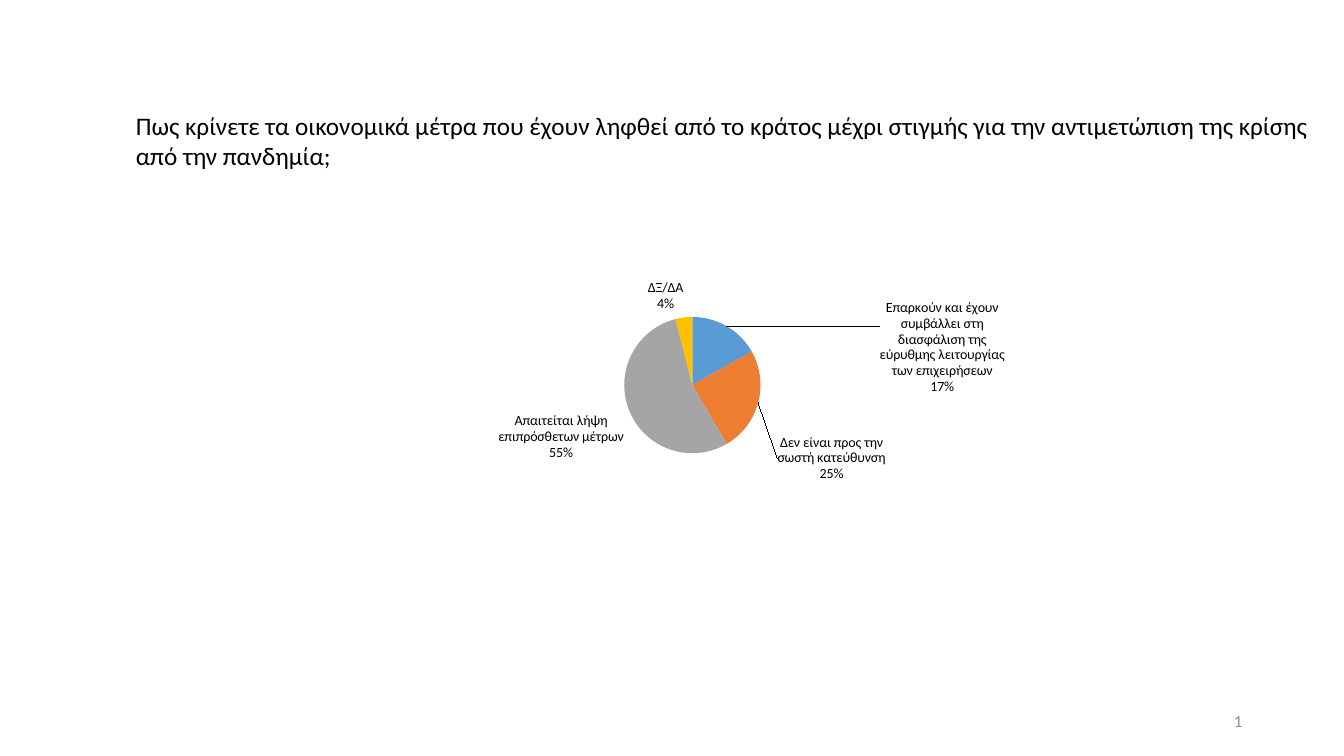
from pptx import Presentation
from pptx.chart.data import CategoryChartData
from pptx.dml.color import RGBColor
from pptx.enum.chart import XL_CHART_TYPE, XL_LABEL_POSITION
from pptx.enum.text import MSO_ANCHOR, PP_ALIGN
from pptx.oxml import parse_xml
from pptx.oxml.ns import nsdecls, qn
from pptx.util import Inches, Pt

PIE = XL_CHART_TYPE.PIE
OUTSIDE = XL_LABEL_POSITION.OUTSIDE_END
LEFT, RIGHT = PP_ALIGN.LEFT, PP_ALIGN.RIGHT
TOP, MIDDLE = MSO_ANCHOR.TOP, MSO_ANCHOR.MIDDLE

BLACK = RGBColor(0x00, 0x00, 0x00)
GRAY = RGBColor(0x8C, 0x8C, 0x8C)
BLUE = RGBColor(0x5B, 0x9B, 0xD5)
ORANGE = RGBColor(0xED, 0x7D, 0x31)
SILVER = RGBColor(0xA5, 0xA5, 0xA5)
GOLD = RGBColor(0xFF, 0xC0, 0x00)

# Answer, share in percent, colour, label shift as a fraction of the chart
ANSWERS = [
    ("Επαρκούν και έχουν συμβάλλει στη διασφάλιση της εύρυθμης λειτουργίας "
     "των επιχειρήσεων", 17, BLUE, (0.22, 0.27)),
    ("Δεν είναι προς την σωστή κατεύθυνση", 25, ORANGE, (0.02, 0.2)),
    ("Απαιτείται λήψη επιπρόσθετων μέτρων", 55, SILVER, None),
    ("ΔΞ/ΔΑ", 4, GOLD, None),
]
PERCENT = '0"%"'


class SlideBuilder:
    def __init__(self, s, font="Calibri"):
        self.s = s
        self.font = font

    def style(self, font, size, color):
        font.name = self.font
        font.size = Pt(size)
        font.color.rgb = color

    def text(self, box, text, size, color, align=LEFT, anchor=TOP):
        tf = self.s.shapes.add_textbox(*map(Inches, box)).text_frame
        tf.word_wrap = True
        tf.vertical_anchor = anchor
        p = tf.paragraphs[0]
        p.text = text
        p.alignment = align
        self.style(p.font, size, color)

    def pie(self, box, answers, plot_box):
        data = CategoryChartData()
        data.categories = [a[0] for a in answers]
        data.add_series("Series 1", [a[1] for a in answers])
        chart = self.s.shapes.add_chart(PIE, *map(Inches, box), data).chart
        chart.has_legend = False
        chart.has_title = False
        self.style(chart.font, 10, BLACK)
        plot = chart.plots[0]
        plot.vary_by_categories = True
        series = plot.series[0]

        # Labels: category above percentage
        labels = series.data_labels
        labels.show_category_name = True
        labels.show_value = True
        labels.number_format = PERCENT
        labels.number_format_is_linked = False
        labels.position = OUTSIDE
        dLbls = labels._element
        dLbls.find(qn("c:showBubbleSize")).addnext(
            parse_xml(f'<c:separator {nsdecls("c")}>\n</c:separator>'))

        # Slice colours and moved labels
        for i, (_, _, color, shift) in enumerate(answers):
            fill = series.points[i].format.fill
            fill.solid()
            fill.fore_color.rgb = color
            if shift:
                dLbls.insert(i, self.moved_label(i, *shift))

        # Fixed place of the pie inside the chart
        area = chart._chartSpace.chart.plotArea
        for layout in area.findall(qn("c:layout")):
            area.remove(layout)
        x, y, w, h = plot_box
        area.insert(0, parse_xml(
            f'<c:layout {nsdecls("c")}><c:manualLayout>'
            '<c:layoutTarget val="inner"/>'
            '<c:xMode val="edge"/><c:yMode val="edge"/>'
            f'<c:x val="{x}"/><c:y val="{y}"/><c:w val="{w}"/><c:h val="{h}"/>'
            '</c:manualLayout></c:layout>'))

    def moved_label(self, idx, dx, dy):
        return parse_xml(
            f'<c:dLbl {nsdecls("c")}><c:idx val="{idx}"/>'
            f'<c:layout><c:manualLayout><c:x val="{dx}"/><c:y val="{dy}"/>'
            '</c:manualLayout></c:layout>'
            "<c:numFmt formatCode='" + PERCENT + "' sourceLinked='0'/>"
            '<c:dLblPos val="outEnd"/>'
            '<c:showLegendKey val="0"/><c:showVal val="1"/>'
            '<c:showCatName val="1"/><c:showSerName val="0"/>'
            '<c:showPercent val="0"/><c:showBubbleSize val="0"/>'
            '<c:separator>\n</c:separator></c:dLbl>')


def main():
    prs = Presentation()
    prs.slide_width, prs.slide_height = Inches(13.33), Inches(7.5)
    slide = SlideBuilder(prs.slides.add_slide(prs.slide_layouts[6]))

    # Slide number
    slide.text((9.42, 6.95, 3, 0.4), "1", 12, GRAY, RIGHT, MIDDLE)

    # Question
    slide.text((1.25, 1.04, 12.21, 0.71),
               "Πως κρίνετε τα οικονομικά μέτρα που έχουν ληφθεί από το κράτος "
               "μέχρι στιγμής για την αντιμετώπιση της κρίσης από την πανδημία;",
               18, BLACK)

    # Answers
    slide.pie((3.42, 2.08, 6.76, 2.7), ANSWERS, (0.41, 0.39, 0.2, 0.51))

    prs.save("out.pptx")


if __name__ == "__main__":
    main()
